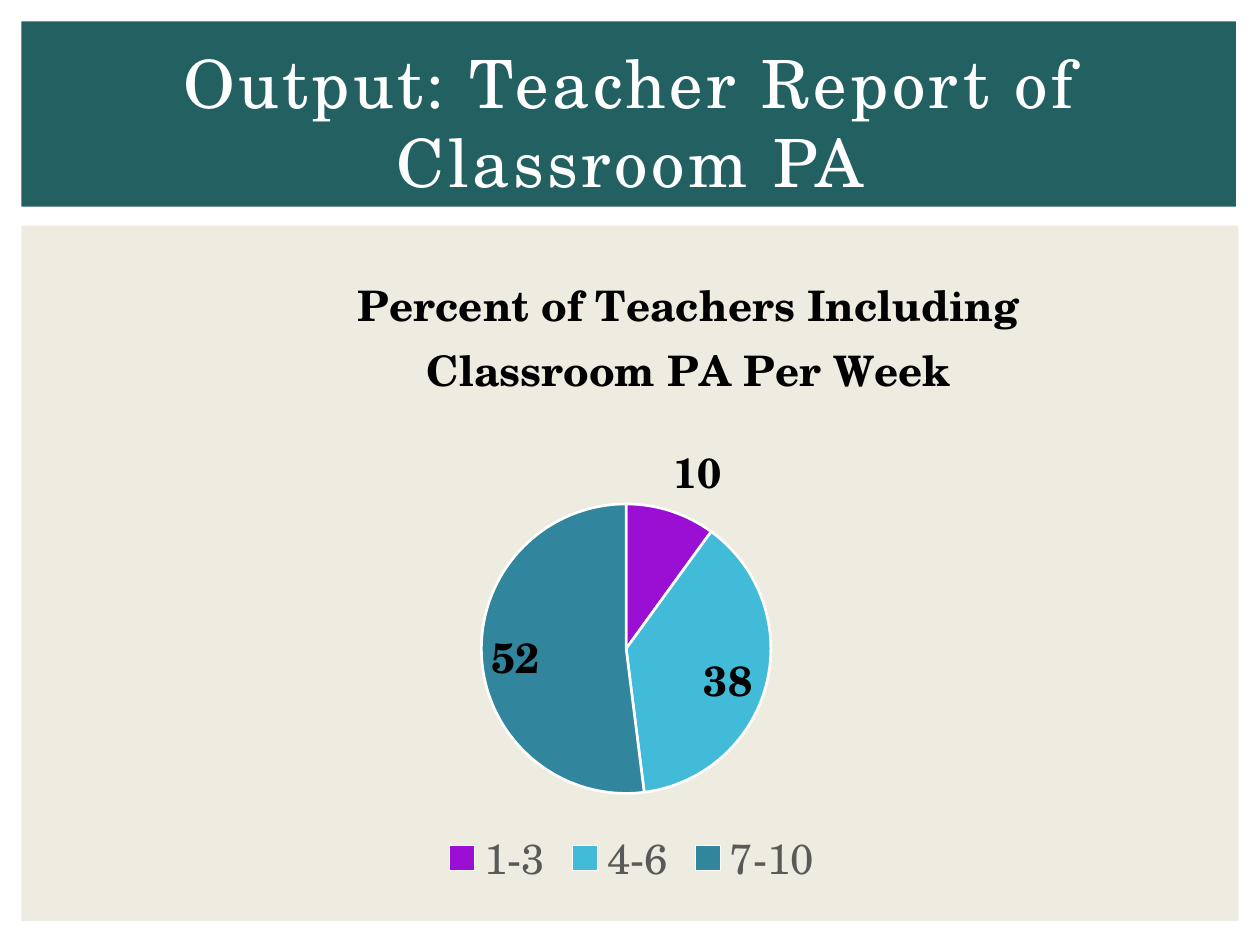
from pptx import Presentation
from pptx.chart.data import CategoryChartData
from pptx.dml.color import RGBColor
from pptx.enum.chart import XL_CHART_TYPE, XL_LABEL_POSITION, XL_LEGEND_POSITION
from pptx.enum.shapes import MSO_SHAPE
from pptx.enum.text import MSO_ANCHOR, PP_ALIGN
from pptx.oxml import parse_xml
from pptx.oxml.ns import nsdecls
from pptx.util import Inches, Pt

FONT = "TeX Gyre Schola"


def style(font, size, color, bold=False):
    font.name = FONT
    font.size = Pt(size)
    font.bold = bold
    font.color.rgb = RGBColor.from_string(color)


def layout_xml(target="", **fractions):
    items = "".join(f'<c:{k} val="{v}"/>' for k, v in fractions.items())
    return parse_xml(
        f'<c:layout {nsdecls("c")}><c:manualLayout>{target}'
        f'<c:xMode val="edge"/><c:yMode val="edge"/>{items}'
        "</c:manualLayout></c:layout>")


prs = Presentation()
prs.slide_width, prs.slide_height = Inches(10), Inches(7.5)
s = prs.slides.add_slide(prs.slide_layouts[6])

# Body panel and title band
for top, width, height, color in [(1.79, 9.66, 5.52, "EEECE1"),
                                  (0.17, 9.64, 1.47, "236062")]:
    sp = s.shapes.add_shape(MSO_SHAPE.RECTANGLE, Inches(0.17), Inches(top),
                            Inches(width), Inches(height))
    sp.shadow.inherit = False
    sp.fill.solid()
    sp.fill.fore_color.rgb = RGBColor.from_string(color)
    sp.line.fill.background()

# Slide title
tf = s.shapes.add_textbox(Inches(0.42), Inches(0.39), Inches(9.17), Inches(1.15)).text_frame
tf.word_wrap = True
tf.vertical_anchor = MSO_ANCHOR.MIDDLE
p = tf.paragraphs[0]
p.alignment = PP_ALIGN.CENTER
p.line_spacing = Pt(45.5)
r = p.add_run()
r.text = "Output: Teacher Report of Classroom PA"
style(r.font, 38, "FFFFFF")
r.font._element.set("spc", "200")

# Pie chart
data = CategoryChartData()
data.categories = ["1-3", "4-6", "7-10"]
data.add_series("Series 1", [10, 38, 52])
chart = s.shapes.add_chart(XL_CHART_TYPE.PIE, Inches(0.42), Inches(2),
                           Inches(9.19), Inches(5.12), data).chart
style(chart.font, 10, "000000")

# Chart title
tf = chart.chart_title.text_frame
for i, text in enumerate(["Percent of Teachers Including", "Classroom PA Per Week"]):
    p = tf.add_paragraph() if i else tf.paragraphs[0]
    r = p.add_run()
    r.text = text
    style(r.font, 24, "000000", bold=True)
title = chart.chart_title._element
for old in title.findall("{*}layout"):
    title.remove(old)
title.find("{*}tx").addnext(layout_xml(x=0.26, y=0.02))

# Plot position
area = chart._chartSpace.chart.plotArea
for old in area.findall("{*}layout"):
    area.remove(old)
area.insert(0, layout_xml('<c:layoutTarget val="inner"/>', x=0.37, y=0.39, w=0.25, h=0.45))

# Slices and value labels
plot = chart.plots[0]
plot.vary_by_categories = True
for i, color in enumerate(["9B0FD5", "41BBD7", "31859C"]):
    fmt = plot.series[0].points[i].format
    fmt.fill.solid()
    fmt.fill.fore_color.rgb = RGBColor.from_string(color)
    fmt.line.color.rgb = RGBColor.from_string("FFFFFF")
    fmt.line.width = Pt(1.5)
labels = plot.series[0].data_labels
labels.show_value = True
labels.position = XL_LABEL_POSITION.BEST_FIT
style(labels.font, 24, "000000", bold=True)

# Legend
chart.has_legend = True
chart.legend.position = XL_LEGEND_POSITION.BOTTOM
chart.legend.include_in_layout = False
style(chart.legend.font, 24, "595959")

prs.save("out.pptx")
